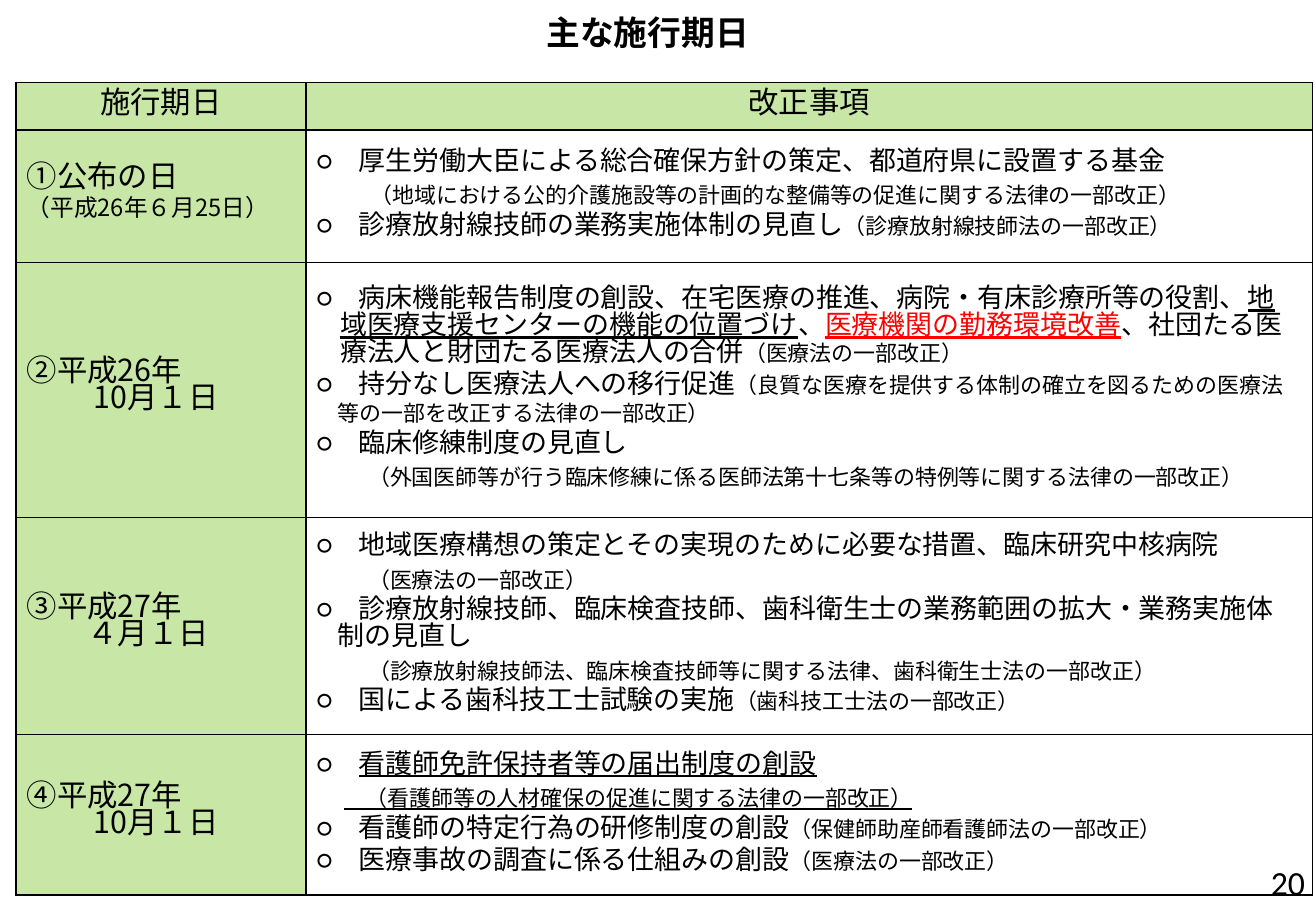
from dataclasses import dataclass

from lxml.etree import SubElement
from pptx import Presentation
from pptx.dml.color import RGBColor
from pptx.enum.text import MSO_ANCHOR as Anchor, MSO_AUTO_SIZE as AutoSize, PP_ALIGN as Align
from pptx.oxml.ns import qn
from pptx.util import Inches, Pt

COLORS = {"text": "000000", "accent": "FF0000", "green": "92D050"}
GOTHIC, BODY = "Noto Sans CJK JP", "Calibri"
COLUMNS = (2.39, 8.28)
ROWS = (0.39, 1.09, 2.1, 1.79, 1.32)


@dataclass(frozen=True)
class Span:
    text: str
    size: float = 16
    font: str = BODY
    color: str = "text"
    underline: bool = False
    bold: bool = False


@dataclass(frozen=True)
class Para:
    spans: tuple[Span, ...]
    left: float = 0
    first: float = 0
    align: Align = Align.LEFT
    line: float | None = 16
    after: float = 0


def item(*spans: Span, hang: float = 0.17) -> Para:
    """A circled item whose further lines hang."""
    return Para(spans, hang, -hang, after=3)


def law(text: str, left: float = 0.42, underline: bool = False) -> Para:
    """The amended law, on its own line under an item."""
    return Para((Span(text, 13, underline=underline),), left, after=3)


def small(text: str) -> Span:
    return Span(text, 13)


def head(text: str) -> tuple[Para, ...]:
    return (Para((Span(text, 18, GOTHIC),), align=Align.CENTER),)


def date(year: str, day: str, left: float) -> tuple[Para, ...]:
    return (
        Para((Span(year, 18, GOTHIC),), align=Align.JUSTIFY),
        Para((Span(day, 18, GOTHIC),), left, align=Align.JUSTIFY),
    )


SCHEDULE = (
    (head("施行期日"), head("改正事項")),
    (
        (Para((Span("①公布の日", 18, GOTHIC),)),
         Para((Span("（平成26年６月25日）", 14, GOTHIC),))),
        (item(Span("○　厚生労働大臣による総合確保方針の策定、都道府県に設置する基金")),
         law("（地域における公的介護施設等の計画的な整備等の促進に関する法律の一部改正）", 0.44),
         item(Span("○　診療放射線技師の業務実施体制の見直し"),
              small("（診療放射線技師法の一部改正）"))),
    ),
    (
        date("②平成26年", "10月１日", 0.55),
        (item(Span("○　病床機能報告制度の創設、在宅医療の推進、病院・有床診療所等の役割、"),
              Span("地域医療支援センターの機能の位置づけ", underline=True),
              Span("、"),
              Span("医療機関の勤務環境改善", color="accent", underline=True),
              Span("、社団たる医療法人と財団たる医療法人の合併"),
              small("（医療法の一部改正）"), hang=0.19),
         item(Span("○　持分なし医療法人への移行促進"),
              small("（良質な医療を提供する体制の確立を図るための医療法等の一部を改正する法律の一部改正）")),
         item(Span("○　臨床修練制度の見直し")),
         law("（外国医師等が行う臨床修練に係る医師法第十七条等の特例等に関する法律の一部改正）")),
    ),
    (
        date("③平成27年", "４月１日", 0.5),
        (item(Span("○　地域医療構想の策定とその実現のために必要な措置、臨床研究中核病院")),
         law("（医療法の一部改正）"),
         item(Span("○　診療放射線技師、臨床検査技師、歯科衛生士の業務範囲の拡大・業務実施体制の見直し")),
         law("（診療放射線技師法、臨床検査技師等に関する法律、歯科衛生士法の一部改正）"),
         item(Span("○　国による歯科技工士試験の実施"), small("（歯科技工士法の一部改正）"))),
    ),
    (
        date("④平成27年", "10月１日", 0.55),
        (item(Span("○　"), Span("看護師免許保持者等の届出制度の創設", underline=True)),
         law("　（看護師等の人材確保の促進に関する法律の一部改正）", 0.22, underline=True),
         item(Span("○　看護師の特定行為の研修制度の創設"),
              small("（保健師助産師看護師法の一部改正）")),
         item(Span("○　医療事故の調査に係る仕組みの創設"), small("（医療法の一部改正）"))),
    ),
)


def rgb(name: str) -> RGBColor:
    return RGBColor.from_string(COLORS[name])


def write(tf, paras: tuple[Para, ...]) -> None:
    for i, para in enumerate(paras):
        p = tf.paragraphs[0] if i == 0 else tf.add_paragraph()
        layout = {"alignment": para.align, "space_after": Pt(para.after),
                  "line_spacing": Pt(para.line) if para.line else None}
        for name, value in layout.items():
            setattr(p, name, value)
        pPr = p._p.get_or_add_pPr()
        pPr.set("marL", str(Inches(para.left)))
        pPr.set("indent", str(Inches(para.first)))
        for span in para.spans:
            r = p.add_run()
            r.text = span.text
            style = {"size": Pt(span.size), "name": span.font,
                     "bold": span.bold, "underline": span.underline}
            for name, value in style.items():
                setattr(r.font, name, value)
            r.font.color.rgb = rgb(span.color)
            rPr = r._r.get_or_add_rPr()
            rPr.set("lang", "ja-JP")
            SubElement(rPr, qn("a:ea")).set("typeface", span.font)


def add_text(s, left: float, top: float, width: float, height: float,
             para: Para, anchor: Anchor) -> None:
    box = s.shapes.add_textbox(*map(Inches, (left, top, width, height)))
    tf = box.text_frame
    tf.word_wrap = True
    tf.auto_size = AutoSize.NONE
    tf.vertical_anchor = anchor
    write(tf, (para,))


def style_cell(cell, shaded: bool, bottom: float) -> None:
    """Set margins, borders and a half-transparent green fill or none."""
    layout = {"vertical_anchor": Anchor.MIDDLE,
              "margin_left": Inches(0.09), "margin_right": Inches(0.09),
              "margin_top": Inches(0.04), "margin_bottom": Inches(bottom)}
    for name, value in layout.items():
        setattr(cell, name, value)
    tcPr = cell._tc.get_or_add_tcPr()
    for side in ("lnL", "lnR", "lnT", "lnB"):
        ln = SubElement(tcPr, qn(f"a:{side}"))
        ln.set("w", str(Pt(1)))
        SubElement(SubElement(ln, qn("a:solidFill")), qn("a:srgbClr")).set("val", COLORS["text"])
    if shaded:
        fill = SubElement(tcPr, qn("a:solidFill"))
        color = SubElement(fill, qn("a:srgbClr"))
        color.set("val", COLORS["green"])
        SubElement(color, qn("a:alpha")).set("val", "50000")
    else:
        cell.fill.background()


def add_schedule(s) -> None:
    frame = s.shapes.add_table(len(ROWS), len(COLUMNS), Inches(0.13), Inches(0.68),
                               Inches(sum(COLUMNS)), Inches(sum(ROWS)))
    table = frame.table
    table.first_row = table.horz_banding = False
    for column, width in zip(table.columns, COLUMNS):
        column.width = Inches(width)
    for i, (height, contents) in enumerate(zip(ROWS, SCHEDULE)):
        table.rows[i].height = Inches(height)
        for j, paras in enumerate(contents):
            cell = table.cell(i, j)
            style_cell(cell, shaded=i == 0 or j == 0, bottom=0.04 if i else 0)
            write(cell.text_frame, paras)


def main() -> None:
    prs = Presentation()
    prs.slide_width, prs.slide_height = Inches(10.83), Inches(7.5)
    s = prs.slides.add_slide(prs.slide_layouts[6])
    title = Para((Span("主な施行期日", 20, GOTHIC, bold=True),), align=Align.CENTER, line=None)
    number = Para((Span("20", 20),), align=Align.RIGHT, line=None)
    add_text(s, 0.04, 0.05, 10.58, 0.44, title, Anchor.TOP)
    add_schedule(s)
    add_text(s, 8.31, 7.06, 2.53, 0.4, number, Anchor.MIDDLE)
    prs.save("out.pptx")


if __name__ == "__main__":
    main()
